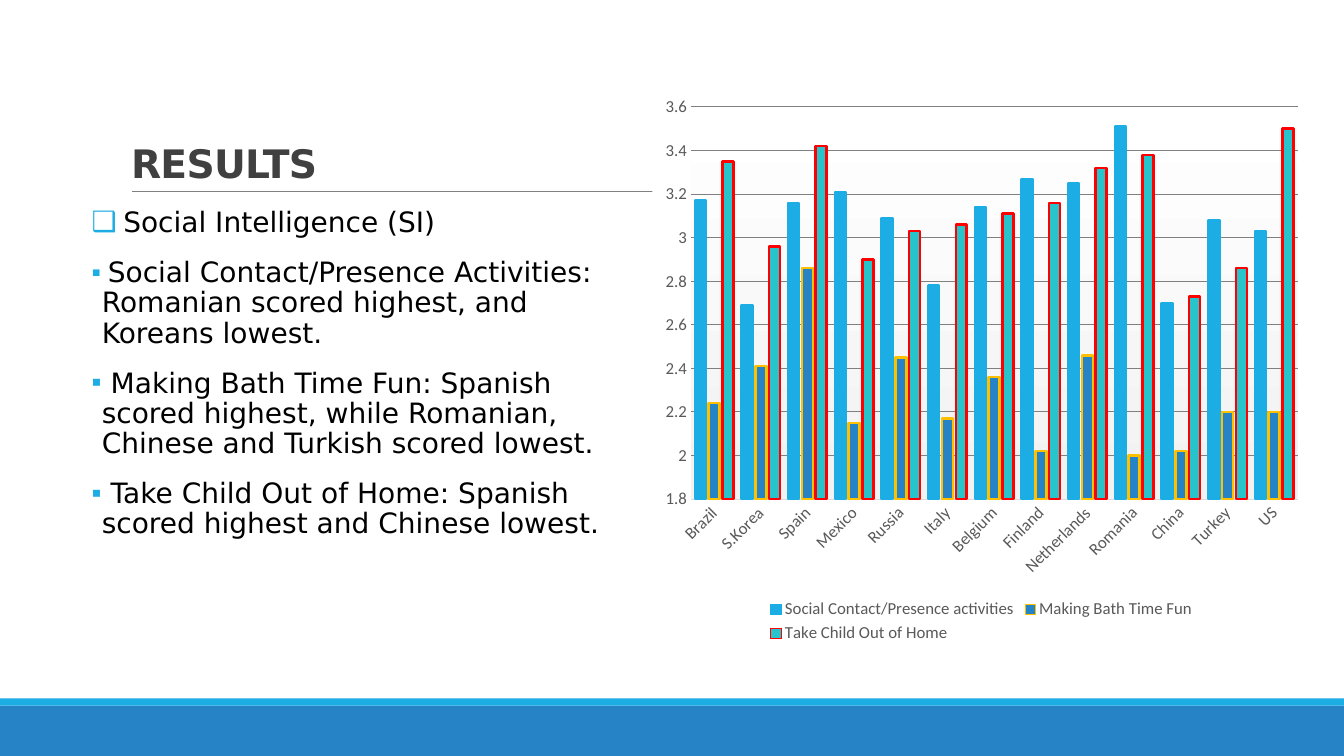
from dataclasses import dataclass

from lxml import etree
from pptx import Presentation
from pptx import oxml
from pptx.chart import data
from pptx.dml import color
from pptx.enum import chart as charts, shapes, text
from pptx.oxml import ns
from pptx.util import Inches, Pt


@dataclass(frozen=True)
class Theme:
    sky: str = "1CADE4"
    blue: str = "2683C6"
    teal: str = "28C4CC"
    gold: str = "FFC000"
    red: str = "FF0000"
    white: str = "FFFFFF"
    black: str = "000000"
    heading: str = "404040"
    label: str = "595959"
    rule: str = "808080"
    axis: str = "D9D9D9"
    plot_end: str = "F2F2F2"
    text_font: str = "DejaVu Sans"
    chart_font: str = "Calibri"
    title_size: int = 28
    body_size: int = 20
    small_body_size: int = 19
    chart_size: int = 12


THEME = Theme()


def rgb(value):
    return color.RGBColor.from_string(value)


def style_font(font, name, size, value, bold=False):
    font.name, font.size, font.bold = name, Pt(size), bold
    font.color.rgb = rgb(value)


presentation = Presentation()
presentation.slide_width = Inches(13.33)
presentation.slide_height = Inches(7.5)
slide = presentation.slides.add_slide(presentation.slide_layouts[1])

# Footer bands and title rule
for top, height, fill in ((7, 0.5, THEME.blue), (6.93, 0.07, THEME.sky)):
    band = slide.shapes.add_shape(
        shapes.MSO_SHAPE.RECTANGLE, 0, Inches(top), Inches(13.33), Inches(height))
    band.shadow.inherit = False
    band.fill.solid()
    band.fill.fore_color.rgb = rgb(fill)
    band.line.fill.background()

title_rule = slide.shapes.add_connector(
    shapes.MSO_CONNECTOR.STRAIGHT, Inches(1.31), Inches(1.9), Inches(12.21), Inches(1.9))
title_rule.line.color.rgb = rgb(THEME.rule)
title_rule.line.width = Pt(0.5)
etree.SubElement(title_rule._element.spPr, ns.qn("a:effectLst"))

# Title
title = slide.shapes.title
title.left, title.top, title.width, title.height = map(Inches, (1.2, 0.31, 11, 1.59))
title.text_frame.text = "RESULTS"
title.text_frame.vertical_anchor = text.MSO_ANCHOR.BOTTOM
title.text_frame.auto_size = text.MSO_AUTO_SIZE.NONE
paragraph = title.text_frame.paragraphs[0]
paragraph.alignment = text.PP_ALIGN.LEFT
paragraph.line_spacing = 0.85
run = paragraph.runs[0]
style_font(run.font, THEME.text_font, THEME.title_size, THEME.heading, bold=True)
run._r.get_or_add_rPr().set("spc", "-50")

# Findings: bullet, size of a narrow leading space (None if none), wording
findings = (
    ("❑", THEME.body_size, "Social Intelligence (SI)"),
    ("▪", THEME.small_body_size, "Social Contact/Presence Activities: Romanian scored "
     "highest, and Koreans lowest."),
    ("▪", None, " Making Bath Time Fun: Spanish scored highest, while Romanian, "
     "Chinese and Turkish scored lowest."),
    ("▪", None, " Take Child Out of Home: Spanish scored highest and Chinese lowest."),
)
body = slide.placeholders[1]
body.left, body.top, body.width, body.height = map(Inches, (0.91, 2.02, 5.4, 4.4))
frame = body.text_frame
frame.margin_left = frame.margin_right = 0
frame.auto_size = text.MSO_AUTO_SIZE.NONE
for index, (bullet, space_size, wording) in enumerate(findings):
    paragraph = frame.paragraphs[0] if index == 0 else frame.add_paragraph()
    paragraph.line_spacing = 0.9
    paragraph.space_before, paragraph.space_after = Pt(12), Pt(2)
    properties = paragraph._p.get_or_add_pPr()
    properties.set("marL", str(Inches(0.1)))
    properties.set("indent", str(-Inches(0.1)))
    bullet_color = etree.SubElement(properties, ns.qn("a:buClr"))
    etree.SubElement(bullet_color, ns.qn("a:srgbClr"), val=THEME.sky)
    etree.SubElement(properties, ns.qn("a:buChar"), char=bullet)
    if space_size:
        paragraph.text = " "
        style_font(paragraph.runs[0].font, THEME.chart_font, space_size, THEME.heading)
    run = paragraph.add_run()
    run.text = wording
    style_font(run.font, THEME.text_font, THEME.body_size, THEME.black)

# Chart: name, fill, outline, scores by country
series_rows = (
    ("Social Contact/Presence activities", THEME.sky, THEME.sky,
     (3.17, 2.69, 3.16, 3.21, 3.09, 2.78, 3.14, 3.27, 3.25, 3.51, 2.7, 3.08, 3.03)),
    ("Making Bath Time Fun", THEME.blue, THEME.gold,
     (2.24, 2.41, 2.86, 2.15, 2.45, 2.17, 2.36, 2.02, 2.46, 2, 2.02, 2.2, 2.2)),
    ("Take Child Out of Home", THEME.teal, THEME.red,
     (3.35, 2.96, 3.42, 2.9, 3.03, 3.06, 3.11, 3.16, 3.32, 3.38, 2.73, 2.86, 3.5)),
)
scores = data.CategoryChartData()
scores.categories = ("Brazil", "S.Korea", "Spain", "Mexico", "Russia", "Italy", "Belgium",
                     "Finland", "Netherlands", "Romania", "China", "Turkey", "US")
for name, fill, outline, values in series_rows:
    scores.add_series(name, values)
chart = slide.shapes.add_chart(
    charts.XL_CHART_TYPE.COLUMN_CLUSTERED,
    Inches(6.47), Inches(0.85), Inches(6.53), Inches(5.57), scores).chart
chart.has_title = False
chart.has_legend = True
chart.legend.position = charts.XL_LEGEND_POSITION.BOTTOM
chart.legend.include_in_layout = False

plot = chart.plots[0]
plot.gap_width, plot.overlap = 75, -25
plot.vary_by_categories = False
for series, (name, fill, outline, values) in zip(plot.series, series_rows):
    series.format.fill.solid()
    series.format.fill.fore_color.rgb = rgb(fill)
    series.format.line.color.rgb = rgb(outline)
    series.format.line.width = Pt(1.75)

category_axis, value_axis = chart.category_axis, chart.value_axis
for axis in (category_axis, value_axis):
    axis.major_tick_mark = axis.minor_tick_mark = charts.XL_TICK_MARK.NONE
for font in (chart.font, chart.legend.font,
             category_axis.tick_labels.font, value_axis.tick_labels.font):
    style_font(font, THEME.chart_font, THEME.chart_size, THEME.label)
category_axis.format.line.color.rgb = rgb(THEME.axis)
category_axis.format.line.width = Pt(0.75)
category_axis._element.find(ns.qn("c:txPr")).find(ns.qn("a:bodyPr")).set("rot", "-2700000")
value_axis.minimum_scale, value_axis.maximum_scale = 1.8, 3.6
value_axis.major_unit = 0.2
value_axis.format.line.fill.background()
value_axis.has_major_gridlines = True
value_axis.major_gridlines.format.line.color.rgb = rgb(THEME.rule)
value_axis.major_gridlines.format.line.width = Pt(0.75)

# Chart and plot backgrounds
area_format = "<c:spPr %s>%s<a:ln><a:noFill/></a:ln></c:spPr>"
chart_fill = f'<a:solidFill><a:srgbClr val="{THEME.white}"/></a:solidFill>'
plot_fill = (
    f'<a:gradFill><a:gsLst><a:gs pos="0"><a:srgbClr val="{THEME.white}"/></a:gs>'
    f'<a:gs pos="100000"><a:srgbClr val="{THEME.plot_end}"/></a:gs></a:gsLst>'
    '<a:lin ang="5400000" scaled="0"/></a:gradFill>')
namespaces = ns.nsdecls("c", "a")
chart_element = chart._chartSpace.find(ns.qn("c:chart"))
chart_element.addnext(oxml.parse_xml(area_format % (namespaces, chart_fill)))
chart_element.find(ns.qn("c:plotArea")).append(
    oxml.parse_xml(area_format % (namespaces, plot_fill)))

presentation.save("out.pptx")
